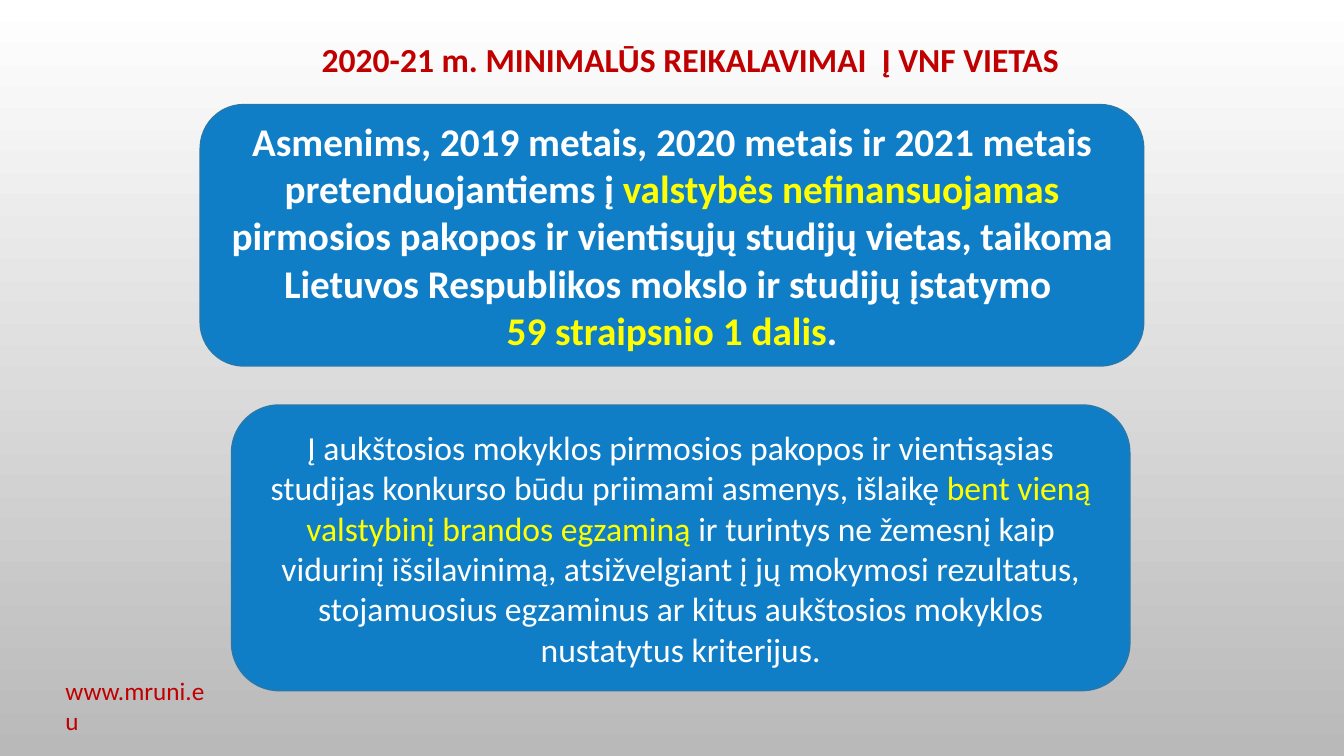
import pptx
import pptx.util
from pptx.dml.color import RGBColor
from pptx.enum.shapes import MSO_SHAPE
from pptx.enum.text import MSO_ANCHOR, MSO_AUTO_SIZE, PP_ALIGN

Cm, Pt = pptx.util.Cm, pptx.util.Pt

RED = RGBColor(0xC0, 0x00, 0x00)
BLUE = RGBColor(0x10, 0x7E, 0xC6)
EDGE = RGBColor(0x23, 0x79, 0xB0)
WHITE = RGBColor(0xFF, 0xFF, 0xFF)
GREY = RGBColor(0xB9, 0xB9, 0xB9)
YELLOW = RGBColor(0xFF, 0xFF, 0x00)

TITLE = "2020-21 m. MINIMALŪS REIKALAVIMAI  Į VNF VIETAS "
WEBSITE = "www.mruni.eu"

# Each panel: position in cm, text size, bold, paragraphs of (text, colour) runs
PANELS = [
    ((5.05, 2.64, 23.77, 6.58), 28, True, [
        [("Asmenims, 2019 metais, 2020 metais ir 2021 metais pretenduojantiems į ", WHITE),
         ("valstybės nefinansuojamas ", YELLOW),
         ("pirmosios pakopos ir vientisųjų studijų vietas, taikoma "
          "Lietuvos Respublikos mokslo ir studijų įstatymo ", WHITE)],
        [("59 straipsnio 1 dalis", YELLOW), (".", WHITE)],
    ]),
    ((5.84, 10.21, 22.63, 7.19), 24, False, [
        [("Į aukštosios mokyklos pirmosios pakopos ir vientisąsias studijas "
          "konkurso būdu priimami asmenys, išlaikę ", WHITE),
         ("bent vieną valstybinį brandos egzaminą", YELLOW),
         (" ir turintys ne žemesnį kaip vidurinį išsilavinimą, atsižvelgiant į jų "
          "mokymosi rezultatus, stojamuosius egzaminus ar kitus aukštosios mokyklos "
          "nustatytus kriterijus.", WHITE)],
    ]),
]


def set_font(p, size, bold=False, color=None):
    p.font.name = "Calibri"
    p.font.size = Pt(size)
    p.font.bold = bold
    if color is not None:
        p.font.color.rgb = color


def add_panel(slide, place, size, bold, paragraphs):
    sp = slide.shapes.add_shape(MSO_SHAPE.ROUNDED_RECTANGLE, *map(Cm, place))
    sp.shadow.inherit = False
    sp.fill.solid()
    sp.fill.fore_color.rgb = BLUE
    sp.line.color.rgb = EDGE
    sp.line.width = Pt(1.25)
    tf = sp.text_frame
    tf.word_wrap = True
    tf.vertical_anchor = MSO_ANCHOR.MIDDLE
    for i, runs in enumerate(paragraphs):
        p = tf.add_paragraph() if i else tf.paragraphs[0]
        p.alignment = PP_ALIGN.CENTER
        set_font(p, size, bold)
        for text, color in runs:
            r = p.add_run()
            r.text = text
            r.font.color.rgb = color


def main():
    prs = pptx.Presentation()
    prs.slide_width, prs.slide_height = Cm(33.87), Cm(19.05)
    slide = prs.slides.add_slide(prs.slide_layouts[5])

    fill = slide.background.fill
    fill.gradient()
    fill.gradient_angle = 270
    for stop, position, color in zip(fill.gradient_stops, (0, 1), (WHITE, GREY)):
        stop.position = position
        stop.color.rgb = color

    title = slide.shapes.title
    title.left, title.top, title.width, title.height = map(Cm, (5.72, 0.86, 23.55, 1.27))
    tf = title.text_frame
    tf.text = TITLE
    tf.word_wrap = True
    tf.auto_size = MSO_AUTO_SIZE.NONE
    tf.vertical_anchor = MSO_ANCHOR.TOP
    tf.paragraphs[0].alignment = PP_ALIGN.CENTER
    set_font(tf.paragraphs[0], 24, True, RED)

    website = slide.shapes.add_textbox(*map(Cm, (1.4, 16.89, 4.01, 1.02)))
    tf = website.text_frame
    tf.text = WEBSITE
    tf.word_wrap = True
    set_font(tf.paragraphs[0], 18, color=RED)

    for panel in PANELS:
        add_panel(slide, *panel)

    prs.save("out.pptx")


if __name__ == "__main__":
    main()
